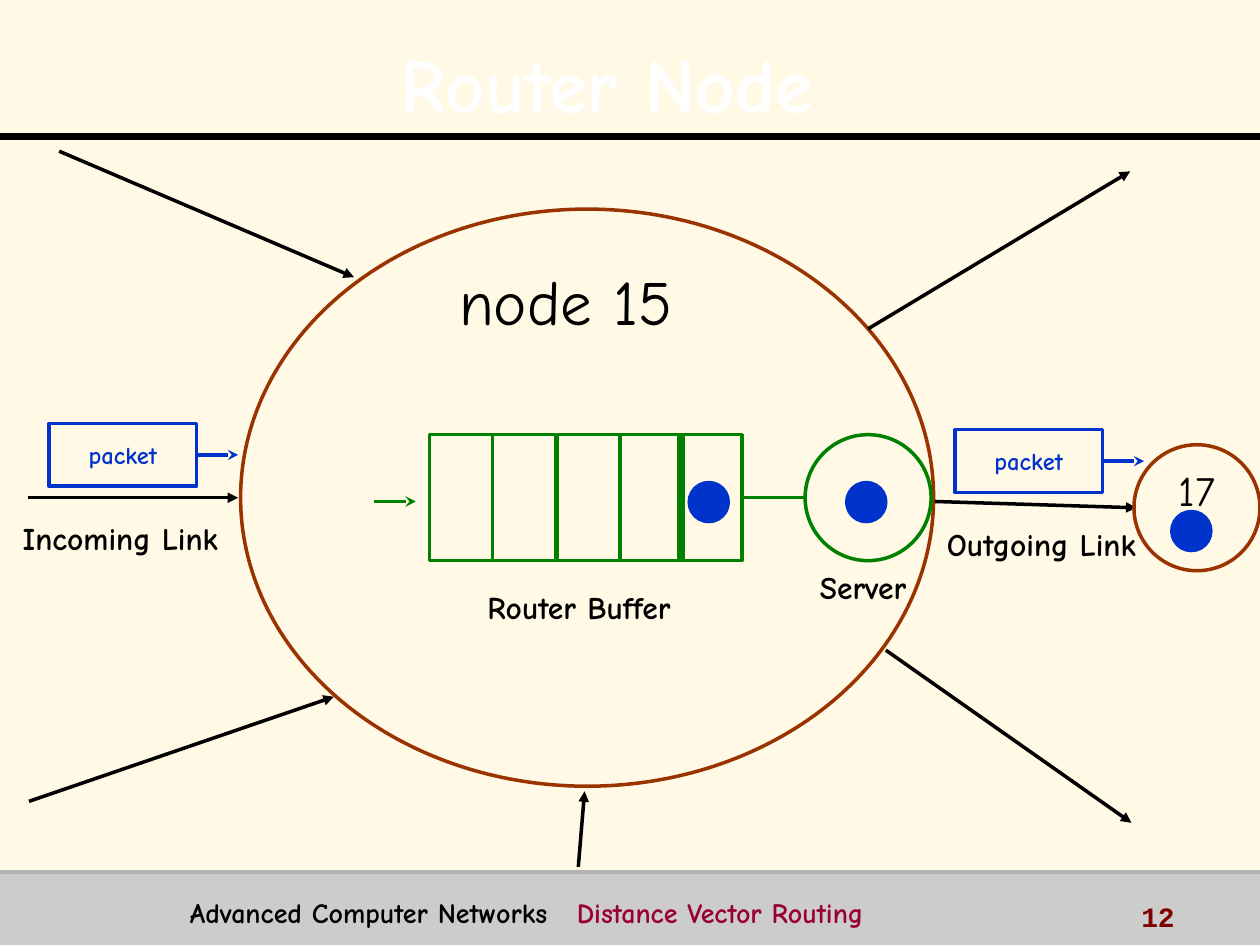
from lxml import etree
from pptx import Presentation
from pptx.dml.color import RGBColor
from pptx.enum.shapes import MSO_CONNECTOR, MSO_SHAPE
from pptx.enum.text import MSO_ANCHOR, PP_ALIGN
from pptx.oxml import parse_xml
from pptx.oxml.ns import nsdecls, qn
from pptx.util import Inches, Pt

RECT, OVAL = MSO_SHAPE.RECTANGLE, MSO_SHAPE.OVAL
STRAIGHT = MSO_CONNECTOR.STRAIGHT
LEFT, CENTER = PP_ALIGN.LEFT, PP_ALIGN.CENTER
TOP, MIDDLE = MSO_ANCHOR.TOP, MSO_ANCHOR.MIDDLE

W, H = 10, 7.5
HAND, MONO = "Comic Neue", "Courier New"
C = {
    "bg": "FFF9E6", "bar": "CCCCCC", "bar_line": "B2B2B2", "black": "000000",
    "white": "FFFFFF", "node": "993300", "buffer": "008000", "packet": "0033CC",
    "topic": "990033", "number": "800000",
}

RULE_Y, BAR_Y = 1.08, 6.92
MID_Y = 3.95
CELL_W, CELL_H = 0.5, 1
CELL_X = (3.41, 3.91, 4.42, 4.92, 5.39)
NODE = (1.91, 1.66, 5.5, 4.58)
SERVER = (6.39, MID_Y - 0.5, 1, 1)
NEXT_NODE = (9, 3.53, 1, 1)
DOT = 0.31
DOTS = ((5.47, 3.83), (6.72, 3.83), (9.3, 4.06))
PACKETS = ((0.39, 3.36), (7.58, 3.41))
PACKET_W, PACKET_H = 1.17, 0.5
SHORT = 0.33

LINKS = (
    (7.42, 3.98, 9.02, 4.03),
    (6.89, 2.61, 8.97, 1.36),
    (7.03, 5.16, 8.98, 6.53),
    (0.22, MID_Y, 1.89, MID_Y),
    (0.47, 1.2, 2.81, 2.2),
    (0.23, 6.36, 2.65, 5.53),
    (4.59, 6.88, 4.64, 6.28),
)
LABELS = (
    ("Incoming Link", 0.08, 4.06, 1.75),
    ("Router Buffer", 3.72, 4.61, 1.75),
    ("Server", 6.31, 4.45, 1.08),
    ("Outgoing Link", 7.39, 4.11, 1.75),
)
FOOTER = (
    ("Advanced Computer Networks", 1.41, 7.06, 3.07, HAND, "black"),
    ("Distance Vector Routing", 4.48, 7.06, 4.21, HAND, "topic"),
    ("12", 8.96, 7.09, 1, MONO, "number"),
)

prs = Presentation()
prs.slide_width, prs.slide_height = Inches(W), Inches(H)
s = prs.slides.add_slide(prs.slide_layouts[6])


def rgb(name):
    return RGBColor.from_string(C[name])


def write(sp, text, size, color, bold=True, font=HAND,
          align=CENTER, anchor=MIDDLE, wrap=False):
    tf = sp.text_frame
    tf.word_wrap, tf.vertical_anchor = wrap, anchor
    p = tf.paragraphs[0]
    p.alignment = align
    r = p.add_run()
    r.text = text
    r.font.name, r.font.size, r.font.bold = font, Pt(size), bold
    r.font.color.rgb = rgb(color)
    return p, r


def textbox(box, *args, **kwargs):
    return write(s.shapes.add_textbox(*map(Inches, box)), *args, **kwargs)


def shape(kind, box, line=None, fill=None):
    sp = s.shapes.add_shape(kind, *map(Inches, box))
    sp.shadow.inherit = False
    if fill:
        sp.fill.solid()
        sp.fill.fore_color.rgb = rgb(fill)
    else:
        sp.fill.background()
    if line:
        sp.line.color.rgb = rgb(line)
        sp.line.width = Pt(2)
    else:
        sp.line.fill.background()
    return sp


def line(ends, color, width=2, head=None):
    cx = s.shapes.add_connector(STRAIGHT, *map(Inches, ends))
    cx.line.color.rgb = rgb(color)
    cx.line.width = Pt(width)
    if head:
        etree.SubElement(cx.line._get_or_add_ln(), qn("a:tailEnd"), type=head)
    etree.SubElement(cx._element.spPr, qn("a:effectLst"))


s.background.fill.solid()
s.background.fill.fore_color.rgb = rgb("bg")
shape(RECT, (0, BAR_Y, W, H - BAR_Y), fill="bar")
line((0, RULE_Y, W, RULE_Y), "black", 4)
line((0, BAR_Y, W, BAR_Y), "bar_line")

p, r = textbox((0.57, 0.08, 8.5, 1.08), "Router Node", 44, "white", wrap=True)
p.line_spacing = 1.1
r.font.fill._xPr.find(qn("a:solidFill")).addnext(parse_xml(
    f'<a:effectLst {nsdecls("a")}><a:outerShdw dist="38100" dir="2700000">'
    f'<a:srgbClr val="{C["black"]}"/></a:outerShdw></a:effectLst>'))

shape(OVAL, NODE, "node")
for ends in LINKS:
    line(ends, "black", head="triangle")
textbox((3.48, 1.87, 2.02, 1.02), "node 15", 36, "black", bold=False)

sp = shape(OVAL, NEXT_NODE, "node")
sp.text_frame.margin_top, sp.text_frame.margin_bottom = 0, Inches(0.28)
write(sp, "17", 24, "black", bold=False)

for x in CELL_X:
    shape(RECT, (x, MID_Y - CELL_H / 2, CELL_W, CELL_H), "buffer")
shape(OVAL, SERVER, "buffer")
line((CELL_X[-1] + CELL_W, MID_Y, SERVER[0], MID_Y), "buffer")
line((2.97, 3.98, 2.97 + SHORT, 3.98), "buffer", head="stealth")

for x, y in PACKETS:
    sp = shape(RECT, (x, y, PACKET_W, PACKET_H), "packet")
    write(sp, "packet", 14, "packet")
    right, mid = x + PACKET_W, y + PACKET_H / 2
    line((right, mid, right + SHORT, mid), "packet", head="stealth")

for text, x, y, w in LABELS:
    textbox((x, y, w, 0.42), text, 18, "black")
for x, y in DOTS:
    shape(OVAL, (x, y, DOT, DOT), "packet", "packet")
for text, x, y, w, font, color in FOOTER:
    textbox((x, y, w, 0.31), text, 16, color, font=font,
            align=LEFT, anchor=TOP, wrap=True)

prs.save("out.pptx")
